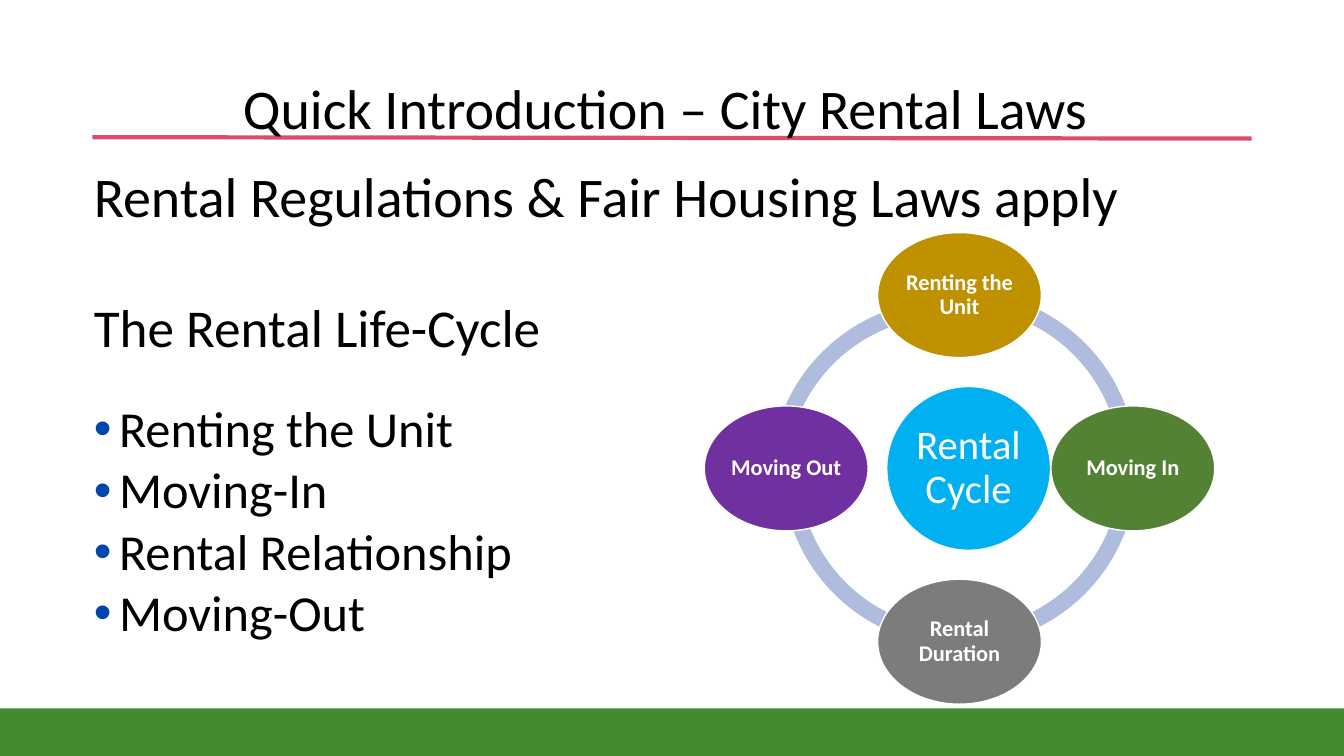
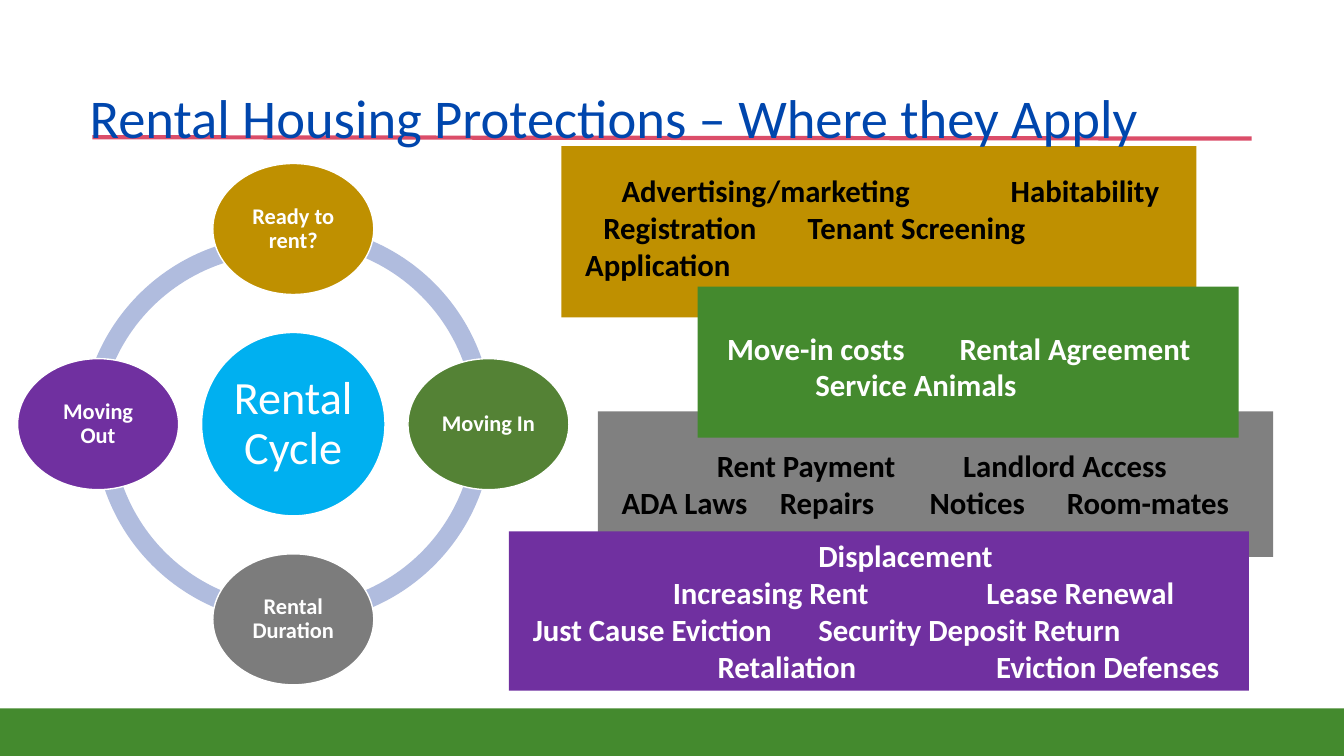
"""Build two slides on the rental cycle and the rules that apply to it."""
from dataclasses import dataclass

from lxml.etree import SubElement
from pptx import Presentation
from pptx.dml.color import RGBColor
from pptx.enum.shapes import MSO_CONNECTOR, MSO_SHAPE
from pptx.enum.text import MSO_ANCHOR, PP_ALIGN
from pptx.oxml.ns import qn
from pptx.util import Pt


@dataclass(frozen=True)
class Theme:
    font: str = "Calibri"
    black: str = "000000"
    white: str = "FFFFFF"
    blue: str = "0046AD"
    green: str = "448A2E"
    rose: str = "DB4D69"
    ring: str = "B0BCDE"
    sky: str = "00B0F0"
    gold: str = "BF9000"
    moss: str = "548235"
    oval_gray: str = "7C7C7C"
    panel_gray: str = "808080"
    purple: str = "7030A0"
    title: int = 40
    title_small: int = 39
    heading: int = 38
    bullet: int = 36
    panel: int = 22
    node: int = 16
    hub: int = 29
    hub_large: int = 33
    tight: float = 0.9


class Deck:
    def __init__(self, theme):
        self.t = theme
        self.prs = Presentation()
        self.prs.slide_width, self.prs.slide_height = Pt(960), Pt(540)
        self.s = None

    def slide(self):
        self.s = self.prs.slides.add_slide(self.prs.slide_layouts[6])
        self.shape(MSO_SHAPE.RECTANGLE, 0, 506, 960, 34, self.t.green)
        c = self.s.shapes.add_connector(
            MSO_CONNECTOR.STRAIGHT, Pt(66), Pt(98), Pt(894), Pt(99))
        c.line.color.rgb = RGBColor.from_string(self.t.rose)
        c.line.width = Pt(3)
        SubElement(c._element.spPr, qn("a:effectLst"))

    def shape(self, kind, x, y, w, h, fill, outline=None):
        sp = self.s.shapes.add_shape(kind, Pt(x), Pt(y), Pt(w), Pt(h))
        sp.shadow.inherit = False
        sp.fill.solid()
        sp.fill.fore_color.rgb = RGBColor.from_string(fill)
        if outline:
            sp.line.color.rgb = RGBColor.from_string(outline)
            sp.line.width = Pt(1)
        else:
            sp.line.fill.background()
        return sp

    def frame(self, sp, inset=0, anchor=MSO_ANCHOR.TOP):
        tf = sp.text_frame
        tf.word_wrap = True
        tf.vertical_anchor = anchor
        tf.margin_left = tf.margin_right = Pt(inset)
        tf.margin_top = tf.margin_bottom = Pt(inset)
        return tf

    def box(self, x, y, w, h, anchor=MSO_ANCHOR.TOP):
        sp = self.s.shapes.add_textbox(Pt(x), Pt(y), Pt(w), Pt(h))
        return self.frame(sp, anchor=anchor)

    def paragraph(self, tf, first, spacing=1.0, before=0, align=PP_ALIGN.LEFT):
        p = tf.paragraphs[0] if first else tf.add_paragraph()
        p.alignment = align
        p.line_spacing = spacing
        p.space_before = Pt(before)
        return p

    def run(self, p, text, size, color, bold=False):
        r = p.add_run()
        r.text = text
        r.font.name = self.t.font
        r.font.size = Pt(size)
        r.font.bold = bold
        r.font.color.rgb = RGBColor.from_string(color)

    def title(self, text, x, middle, size, color, spacing=1.0):
        tf = self.box(x, middle - 40, 890 - x, 80, MSO_ANCHOR.MIDDLE)
        self.run(self.paragraph(tf, True, spacing), text, size, color)

    def body(self, items):
        tf = self.box(67, 120.6, 851, 360)
        for i, (text, size, before, bulleted) in enumerate(items):
            p = self.paragraph(tf, i == 0, self.t.tight, before)
            if bulleted:
                self.bullet(p)
            self.run(p, text, size, self.t.black)

    def bullet(self, p):
        pPr = p._p.get_or_add_pPr()
        pPr.set("marL", str(Pt(18)))
        pPr.set("indent", str(-Pt(18)))
        clr = SubElement(pPr, qn("a:buClr"))
        SubElement(clr, qn("a:srgbClr"), val=self.t.blue)
        SubElement(pPr, qn("a:buFont"), typeface="Arial")
        SubElement(pPr, qn("a:buChar"), char="•")

    def oval(self, cx, cy, w, h, fill, text, size, inset, bold):
        sp = self.shape(MSO_SHAPE.OVAL, cx - w / 2, cy - h / 2, w, h, fill, self.t.white)
        tf = self.frame(sp, inset, MSO_ANCHOR.MIDDLE)
        p = self.paragraph(tf, True, self.t.tight, align=PP_ALIGN.CENTER)
        self.run(p, text, size, self.t.white, bold)

    def cycle(self, cx, cy, radius, ring, node, hub, hub_size, labels, hub_dx=0, shift=(0, 0)):
        for start in (180, 90, 0, 270):
            dx, dy = shift if start == 180 else (0, 0)
            arc = self.shape(MSO_SHAPE.BLOCK_ARC, cx - ring / 2 + dx, cy - ring / 2 + dy,
                             ring, ring, self.t.ring)
            arc.adjustments[0] = start * 0.6
            arc.adjustments[1] = (start + 90) % 360 * 0.6
            arc.adjustments[2] = 0.046
        self.oval(cx + hub_dx, cy, hub, hub, self.t.sky, "Rental Cycle", hub_size, 3, False)
        fills = (self.t.gold, self.t.moss, self.t.oval_gray, self.t.purple)
        steps = ((0, -1), (1, 0), (0, 1), (-1, 0))
        for label, fill, (dx, dy) in zip(labels, fills, steps):
            self.oval(cx + dx * radius, cy + dy * radius, *node, fill,
                      label, self.t.node, 1.5, True)

    def panel(self, x, y, w, h, fill, color, top, lines):
        sp = self.shape(MSO_SHAPE.RECTANGLE, x, y, w, h, fill)
        tf = self.frame(sp)
        tf.margin_top = Pt(top)
        for i, line in enumerate(lines):
            p = self.paragraph(tf, i == 0)
            tabs = SubElement(p._p.get_or_add_pPr(), qn("a:tabLst"))
            for pos, text in line:
                SubElement(tabs, qn("a:tab"), pos=str(Pt(pos)), algn="l")
                self.run(p, "\t" + text, self.t.panel, color, True)


def main():
    t = Theme()
    d = Deck(t)

    d.slide()
    d.title("Quick Introduction – City Rental Laws", 173.5, 76.7, t.title, t.black)
    d.body([
        ("Rental Regulations & Fair Housing Laws apply", t.title, 0, False),
        ("The Rental Life-Cycle", t.heading, 51.7, False),
        ("Renting the Unit", t.bullet, 32, True),
        ("Moving-In", t.bullet, 5, True),
        ("Rental Relationship", t.bullet, 5, True),
        ("Moving-Out", t.bullet, 5, True),
    ])
    d.cycle(685.4, 334.6, 123.8, 253.4, (117, 89.3), 117, t.hub,
            ("Renting the Unit", "Moving In", "Rental Duration", "Moving Out"),
            hub_dx=6.5, shift=(-8.6, 6.5))

    d.slide()
    d.panel(401, 104.4, 453.6, 122.4, t.gold, t.black, 18.2, [
        [(43, "Advertising/marketing"), (321, "Habitability")],
        [(30, "Registration"), (176, "Tenant Screening")],
        [(17, "Application")],
    ])
    d.panel(427, 293.8, 482.4, 104, t.panel_gray, t.black, 25.6, [
        [(85, "Rent Payment"), (261, "Landlord Access")],
        [(17, "ADA Laws"), (130, "Repairs"), (237, "Notices"), (335, "Room-mates")],
    ])
    d.title("Rental Housing Protections – Where they Apply", 64, 86,
            t.title_small, t.blue, t.tight)
    d.cycle(209.5, 303, 139.4, 285, (115, 93.6), 131, t.hub_large,
            ("Ready to rent?", "Moving In", "Rental Duration", "Moving Out"),
            shift=(-9.4, 7.9))
    d.panel(498.4, 204.7, 386.4, 108, t.green, t.white, 30.5, [
        [(21, "Move-in costs"), (187, "Rental Agreement")],
        [(84, "Service Animals")],
    ])
    d.panel(363.6, 379.5, 528.5, 113.8, t.purple, t.white, 4, [
        [(221, "Displacement")],
        [(117, "Increasing Rent"), (341, "Lease Renewal")],
        [(17, "Just Cause Eviction"), (221, "Security Deposit Return")],
        [(149, "Retaliation"), (348, "Eviction Defenses")],
    ])

    d.prs.save("out.pptx")


if __name__ == "__main__":
    main()
